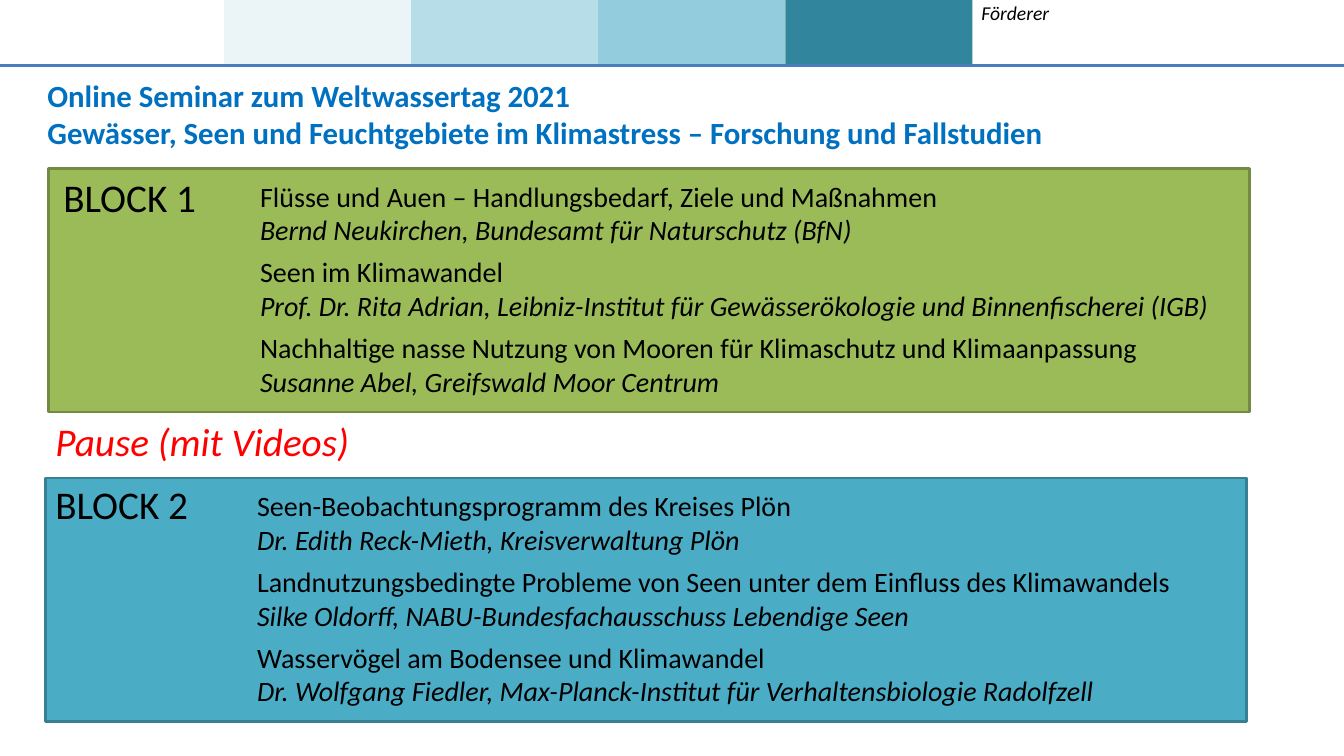
"""Builds the programme slide of an online seminar on water and climate."""
import lxml.etree
import pptx
import pptx.dml.color
import pptx.enum.shapes
import pptx.enum.text
import pptx.oxml.ns
import pptx.util

COLORS = {
    "text": "000000", "heading": "0070C0", "pause": "FF0000", "rule": "4B7EBC",
    "band_1": "DBEEF4", "band_2": "B7DEE8", "band_3": "93CDDD", "band_4": "31859C",
    "block_1": "9BBB59", "edge_1": "738A42", "block_2": "4BACC6", "edge_2": "377F92",
}
COLUMNS, ROWS = 160, 90
BLOCK_WIDTH, BLOCK_HEIGHT = 143, 29
LABEL_HEIGHT = 6.85
HEADER_HEIGHT = 7.8
BAND_LEFT, BAND_WIDTH = 26.67, 22.27

HEADING = [
    "Online Seminar zum Weltwassertag 2021",
    "Gewässer, Seen und Feuchtgebiete im Klimastress – Forschung und Fallstudien",
]
BLOCKS = [
    ("BLOCK 1", "block_1", "edge_1", (5.75, 20.05), (6.35, 20.05), [
        ("Flüsse und Auen – Handlungsbedarf, Ziele und Maßnahmen",
         "Bernd Neukirchen, Bundesamt für Naturschutz (BfN)"),
        ("Seen im Klimawandel",
         "Prof. Dr. Rita Adrian, Leibniz-Institut für Gewässerökologie und Binnenfischerei (IGB)"),
        ("Nachhaltige nasse Nutzung von Mooren für Klimaschutz und Klimaanpassung",
         "Susanne Abel, Greifswald Moor Centrum"),
    ]),
    ("BLOCK 2", "block_2", "edge_2", (5.4, 56.9), (5.4, 56.65), [
        ("Seen-Beobachtungsprogramm des Kreises Plön",
         "Dr. Edith Reck-Mieth, Kreisverwaltung Plön"),
        ("Landnutzungsbedingte Probleme von Seen unter dem Einfluss des Klimawandels",
         "Silke Oldorff, NABU-Bundesfachausschuss Lebendige Seen"),
        ("Wasservögel am Bodensee und Klimawandel",
         "Dr. Wolfgang Fiedler, Max-Planck-Institut für Verhaltensbiologie Radolfzell"),
    ]),
]


def rgb(name):
    return pptx.dml.color.RGBColor.from_string(COLORS[name])


def write(paragraph, text, size=20, color="text", bold=False, italic=False):
    run = paragraph.add_run()
    run.text = text
    run.font.name = "Calibri"
    run.font.size = pptx.util.Pt(size)
    run.font.color.rgb = rgb(color)
    run.font.bold = bold
    run.font.italic = italic


def break_line(paragraph, size=20):
    paragraph.add_line_break()
    line_break = paragraph._p.findall(pptx.oxml.ns.qn("a:br"))[-1]
    lxml.etree.SubElement(line_break, pptx.oxml.ns.qn("a:rPr"), sz=str(size * 100))


class Sheet:
    def __init__(self, deck):
        self.column = deck.slide_width / COLUMNS
        self.row = deck.slide_height / ROWS
        self.slide = deck.slides.add_slide(deck.slide_layouts.get_by_name("Two Content"))
        self.shapes = self.slide.shapes

    def area(self, left, top, width, height):
        return (round(left * self.column), round(top * self.row),
                round(width * self.column), round(height * self.row))

    def box(self, area, fill, edge=None, opacity=None):
        panel = self.shapes.add_shape(
            pptx.enum.shapes.MSO_SHAPE.RECTANGLE, *self.area(*area))
        panel.shadow.inherit = False
        panel.fill.solid()
        panel.fill.fore_color.rgb = rgb(fill)
        if edge:
            panel.line.color.rgb = rgb(edge)
            panel.line.width = pptx.util.Pt(2)
        else:
            panel.line.fill.background()
        if opacity:
            tint = panel._element.spPr.find(".//" + pptx.oxml.ns.qn("a:srgbClr"))
            lxml.etree.SubElement(
                tint, pptx.oxml.ns.qn("a:alpha"), val=str(opacity * 1000))

    def rule(self, row):
        left, top, width, _ = self.area(0, row, COLUMNS, 0)
        rule = self.shapes.add_connector(
            pptx.enum.shapes.MSO_CONNECTOR.STRAIGHT, left, top, left + width, top)
        rule.line.color.rgb = rgb("rule")
        rule.line.width = pptx.util.Pt(1.5)
        lxml.etree.SubElement(rule._element.spPr, pptx.oxml.ns.qn("a:effectLst"))

    def label(self, area, text, wrap=True, **style):
        frame = self.shapes.add_textbox(*self.area(*area)).text_frame
        frame.word_wrap = wrap
        write(frame.paragraphs[0], text, **style)

    def place(self, holder, area):
        holder.left, holder.top, holder.width, holder.height = self.area(*area)
        tree = holder._element.getparent()
        tree.append(holder._element)
        frame = holder.text_frame
        frame.word_wrap = True
        frame.auto_size = pptx.enum.text.MSO_AUTO_SIZE.NONE
        frame.vertical_anchor = pptx.enum.text.MSO_ANCHOR.TOP
        return frame

    def paragraph(self, frame, index, gap=0):
        paragraph = frame.add_paragraph() if index else frame.paragraphs[0]
        properties = paragraph._p.get_or_add_pPr()
        properties.set("marL", "0")
        properties.set("indent", "0")
        lxml.etree.SubElement(properties, pptx.oxml.ns.qn("a:buNone"))
        paragraph.alignment = pptx.enum.text.PP_ALIGN.LEFT
        paragraph.space_before = pptx.util.Pt(gap if index else 0)
        return paragraph

    def heading(self, area, lines):
        frame = self.place(self.shapes.title, area)
        for index, line in enumerate(lines):
            write(self.paragraph(frame, index), line, size=22, color="heading", bold=True)

    def talks(self, number, area, talks):
        frame = self.place(self.slide.placeholders[number], area)
        for index, (topic, speaker) in enumerate(talks):
            paragraph = self.paragraph(frame, index, gap=6)
            write(paragraph, topic)
            break_line(paragraph)
            write(paragraph, speaker, italic=True)


def main():
    deck = pptx.Presentation()
    deck.slide_width = pptx.util.Inches(13.33)
    deck.slide_height = pptx.util.Inches(7.5)
    sheet = Sheet(deck)

    sheet.label((115.65, -0.5, 10.9, 4.1), "Förderer", wrap=False, size=14, italic=True)
    for index in range(4):
        sheet.box((BAND_LEFT + index * BAND_WIDTH, 0, BAND_WIDTH, HEADER_HEIGHT),
                  f"band_{index + 1}", opacity=None if index else 55)
    sheet.rule(HEADER_HEIGHT)
    sheet.heading((4.45, 8.5, 151.5, 10.1), HEADING)

    for number, (name, fill, edge, corner, name_corner, talks) in enumerate(BLOCKS, 1):
        left, top = corner
        sheet.box((left, top, BLOCK_WIDTH, BLOCK_HEIGHT), fill, edge)
        sheet.label((*name_corner, 24, LABEL_HEIGHT), name, size=28)
        sheet.talks(number, (left + 24, top + 0.7, 121.5, 27.5), talks)
    sheet.label((5.4, 49.1, 72.4, LABEL_HEIGHT), "Pause (mit Videos)",
                size=28, color="pause", italic=True)

    deck.save("out.pptx")


if __name__ == "__main__":
    main()
